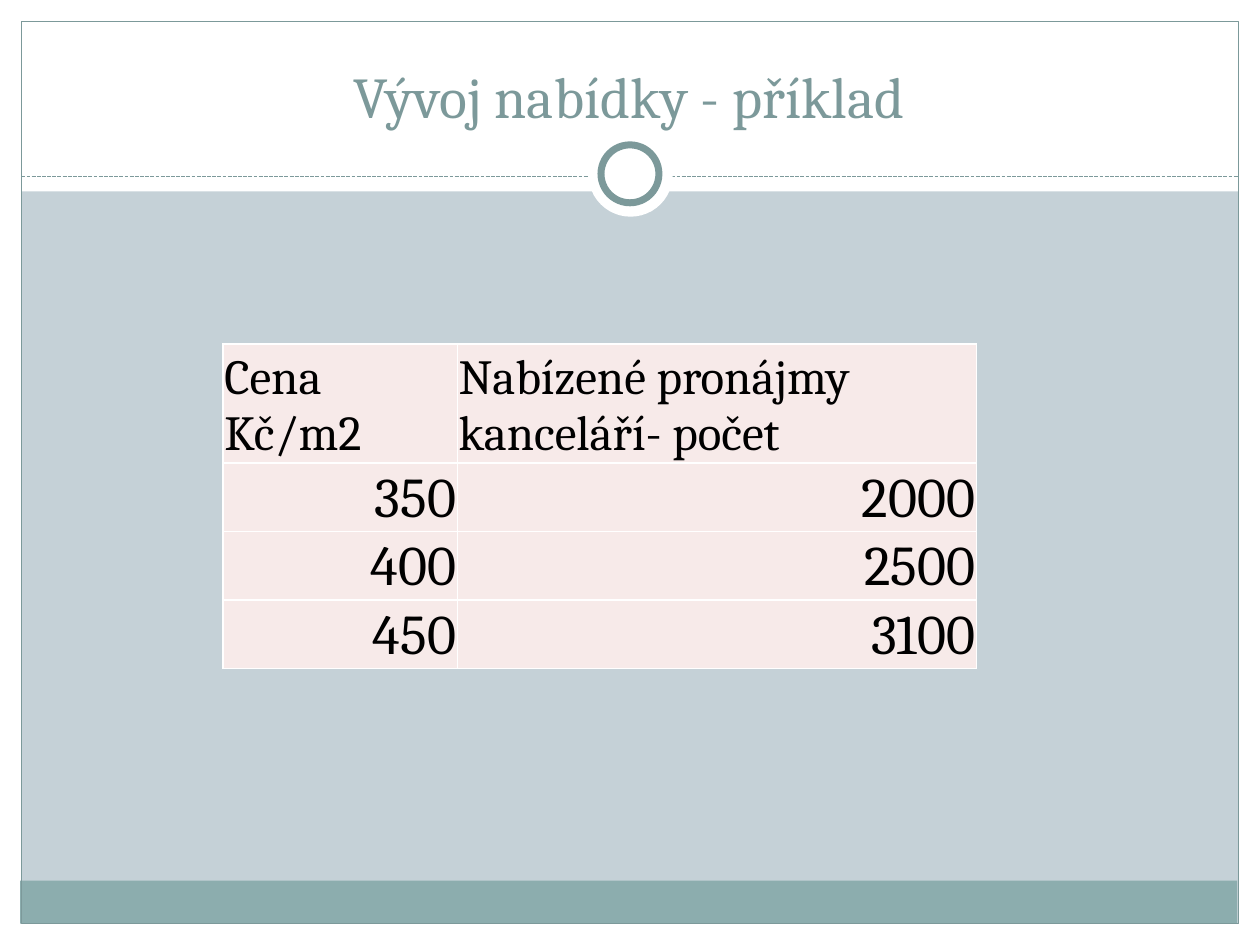
from dataclasses import dataclass

from lxml import etree
from pptx import Presentation
from pptx.dml.color import RGBColor
from pptx.enum import dml, shapes, text
from pptx.oxml import ns
from pptx.slide import Slide
from pptx.util import Inches, Pt

FONT = "Cambria"
TEAL = "7C999A"
WHITE = "FFFFFF"
ROWS = [
    ("Cena Kč/m2", "Nabízené pronájmy kanceláří- počet"),
    ("350", "2000"),
    ("400", "2500"),
    ("450", "3100"),
]


@dataclass
class Part:
    left: float
    top: float
    width: float
    height: float
    fill: str | None = WHITE
    line: float = 0
    kind: shapes.MSO_SHAPE = shapes.MSO_SHAPE.RECTANGLE

    def box(self) -> list[int]:
        return [Inches(n) for n in (self.left, self.top, self.width, self.height)]


OVAL = shapes.MSO_SHAPE.OVAL
FRAME = [
    Part(0, 7.33, 10, 0.17),
    Part(0, 0, 10, 1.52),
    Part(0, 0, 0.17, 7.5),
    Part(9.83, 0, 0.17, 7.5),
    Part(0.16, 6.99, 9.66, 0.34, "8CADAE"),
    Part(0.17, 0.17, 9.66, 7.16, None, 0.75),
]
RING = [
    Part(4.67, 1.05, 0.67, 0.67, kind=OVAL),
    Part(4.77, 1.15, 0.46, 0.46, line=4, kind=OVAL),
]


def paint(target, color: str) -> None:
    target.solid()
    target.fore_color.rgb = RGBColor.from_string(color)


def style(para, size: float, color: str, align: text.PP_ALIGN) -> None:
    para.alignment = align
    para.font.name = FONT
    para.font.size = Pt(size)
    paint(para.font.fill, color)


def draw_part(slide: Slide, part: Part) -> None:
    shape = slide.shapes.add_shape(part.kind, *part.box())
    shape.shadow.inherit = False
    if part.fill:
        paint(shape.fill, part.fill)
    else:
        shape.fill.background()
    if part.line:
        paint(shape.line.fill, TEAL)
        shape.line.width = Pt(part.line)
    else:
        shape.line.fill.background()


def draw_rule(slide: Slide) -> None:
    rule = slide.shapes.add_connector(
        shapes.MSO_CONNECTOR.STRAIGHT,
        Inches(0.17), Inches(1.4), Inches(9.83), Inches(1.4),
    )
    paint(rule.line.fill, TEAL)
    rule.line.width = Pt(0.75)
    rule.line.dash_style = dml.MSO_LINE.SQUARE_DOT
    props = rule._element.spPr
    dash = props.find(".//" + ns.qn("a:prstDash"))
    dash.set("val", "sysDash")
    etree.SubElement(props, ns.qn("a:effectLst"))


def draw_title(slide: Slide) -> None:
    box = slide.shapes.add_textbox(*Part(0.33, 0.25, 9.33, 0.83).box())
    frame = box.text_frame
    frame.word_wrap = True
    frame.vertical_anchor = text.MSO_ANCHOR.BOTTOM
    frame.text = "Vývoj nabídky - příklad"
    style(frame.paragraphs[0], 33, TEAL, text.PP_ALIGN.CENTER)


def add_edges(cell) -> None:
    props = cell._tc.get_or_add_tcPr()
    for i, side in enumerate(("lnL", "lnR", "lnT", "lnB")):
        edge = etree.Element(ns.qn(f"a:{side}"), w=str(Pt(1)))
        fill = etree.SubElement(edge, ns.qn("a:solidFill"))
        etree.SubElement(fill, ns.qn("a:srgbClr"), val=WHITE)
        props.insert(i, edge)


def draw_table(slide: Slide) -> None:
    place = Part(1.77, 2.73, 5.98, 2.47)
    table = slide.shapes.add_table(len(ROWS), 2, *place.box()).table
    table.first_row = table.horz_banding = False
    for col, width in zip(table.columns, (1.86, 4.12)):
        col.width = Inches(width)
    for r, values in enumerate(ROWS):
        head = r == 0
        table.rows[r].height = Inches(0.91 if head else 0.52)
        align = text.PP_ALIGN.LEFT if head else text.PP_ALIGN.RIGHT
        for c, value in enumerate(values):
            cell = table.cell(r, c)
            cell.text = value
            cell.vertical_anchor = text.MSO_ANCHOR.BOTTOM
            cell.margin_left = cell.margin_right = cell.margin_top = Inches(0.01)
            cell.margin_bottom = 0
            paint(cell.fill, "F7EAE9")
            style(cell.text_frame.paragraphs[0], 28 if head else 32, "000000", align)
            add_edges(cell)


def main() -> None:
    deck = Presentation()
    deck.slide_width, deck.slide_height = Inches(10), Inches(7.5)
    slide = deck.slides.add_slide(deck.slide_layouts[6])
    paint(slide.background.fill, "C5D1D7")
    for part in FRAME:
        draw_part(slide, part)
    draw_rule(slide)
    for part in RING:
        draw_part(slide, part)
    draw_title(slide)
    draw_table(slide)
    deck.save("out.pptx")


if __name__ == "__main__":
    main()
